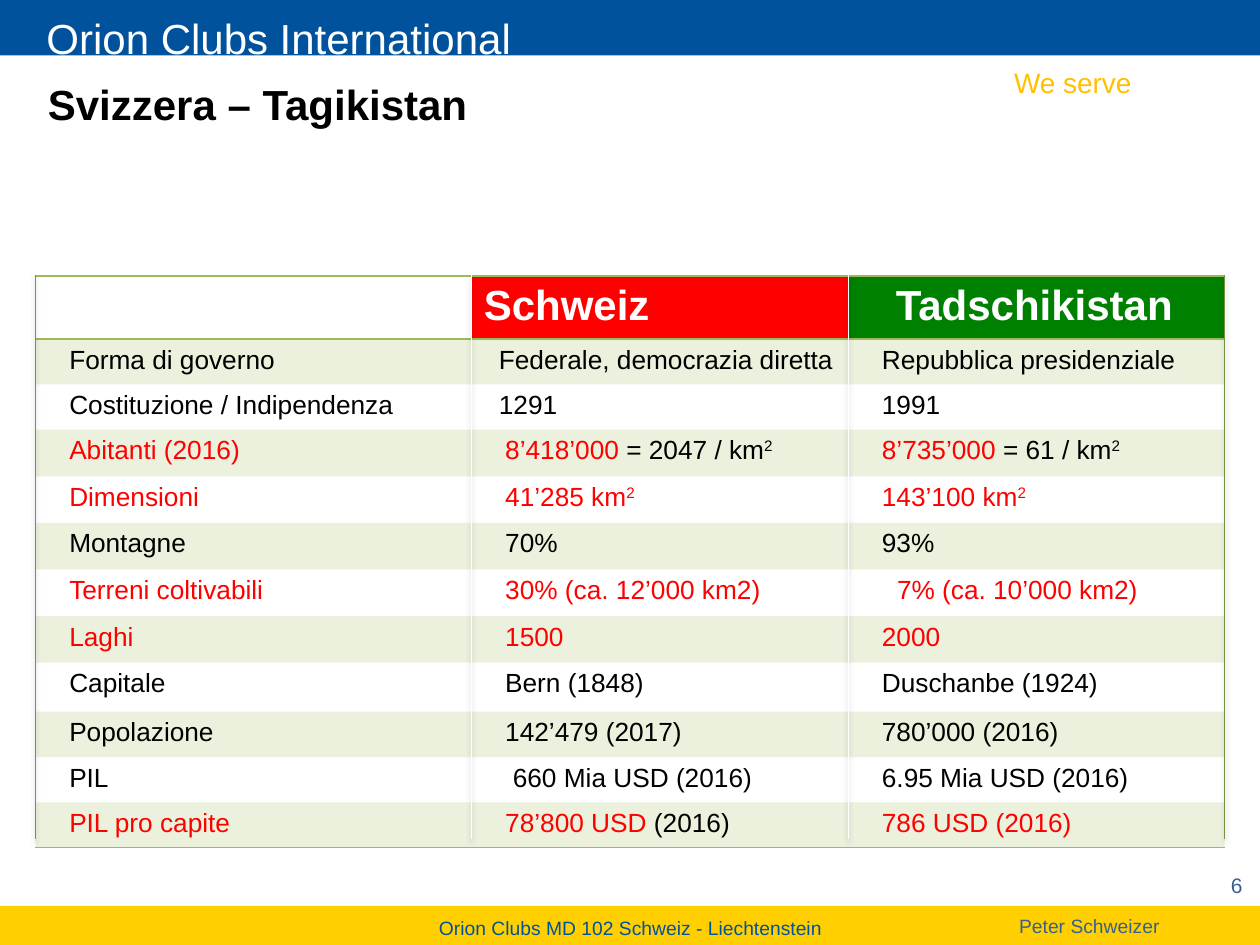
"""Build the Switzerland and Tajikistan comparison slide."""
from lxml import etree
from pptx import Presentation
from pptx.dml.color import RGBColor
from pptx.enum.shapes import MSO_CONNECTOR, MSO_SHAPE
from pptx.enum.text import MSO_ANCHOR, PP_ALIGN
from pptx.oxml import parse_xml
from pptx.oxml.ns import qn
from pptx.util import Inches, Pt

RECTANGLE = MSO_SHAPE.RECTANGLE
STRAIGHT = MSO_CONNECTOR.STRAIGHT
TOP, MIDDLE = MSO_ANCHOR.TOP, MSO_ANCHOR.MIDDLE
LEFT, CENTER, RIGHT = PP_ALIGN.LEFT, PP_ALIGN.CENTER, PP_ALIGN.RIGHT

WHITE = RGBColor(0xFF, 0xFF, 0xFF)
BLACK = RGBColor(0, 0, 0)
RED = RGBColor(0xFF, 0, 0)
GREEN = RGBColor(0, 0x80, 0)
BLUE = RGBColor(0, 0x52, 0x9C)
SLATE = RGBColor(0x37, 0x60, 0x92)
YELLOW = RGBColor(0xFF, 0xCF, 0)
AMBER = RGBColor(0xFF, 0xC0, 0)
OLIVE = RGBColor(0x9B, 0xBB, 0x59)
DARK_OLIVE = RGBColor(0x77, 0x93, 0x3C)

FONT = "Arial"
NAMESPACE = "http://schemas.openxmlformats.org/drawingml/2006/main"
PLAIN_STYLE = "{2D5ABB26-0587-4C30-8999-92F81FD0307C}"

TITLE = "Svizzera – Tagikistan"
BANDS = [(0, 0.44, BLUE), (7.19, 0.31, YELLOW)]
LABELS = [
    ("Orion Clubs International", (0.27, 0.05, 9.42, 0.5), 24, WHITE, LEFT, TOP),
    ("We serve", (7.95, 0.47, 1.15, 0.37), 16, AMBER, LEFT, TOP),
    ("Orion Clubs MD 102 Schweiz - Liechtenstein", (0.01, 7.22, 9.99, 0.29), 11, BLUE, CENTER, TOP),
    ("Peter Schweizer", (7.99, 7.21, 1.34, 0.29), 11, SLATE, LEFT, TOP),
    ("6", (8.86, 6.9, 1.1, 0.25), 12, SLATE, RIGHT, MIDDLE),
]

HEADERS = [("", None, 0.1), ("Schweiz", RED, 0.1), ("Tadschikistan", GREEN, 0.38)]
ROWS = [
    (0.36, "Forma di governo", "Federale, democrazia diretta", "Repubblica presidenziale"),
    (0.36, "Costituzione / Indipendenza", "1291", "1991"),
    (0.37, [("Abitanti (2016)", RED)],
     [("8’418’000", RED), (" = 2047 / km", BLACK), ("2", BLACK, True)],
     [("8’735’000 ", RED), ("= 61 / km", BLACK), ("2", BLACK, True)]),
    (0.37, [("Dimensioni", RED)],
     [("41’285 km", RED), ("2", RED, True)],
     [("143’100 km", RED), ("2", RED, True)]),
    (0.37, "Montagne", "70%", "93%"),
    (0.37, [("Terreni coltivabili", RED)],
     [("30% (ca. 12’000 km2)", RED)], [("7% (ca. 10’000 km2)", RED)]),
    (0.37, [("Laghi", RED)], [("1500", RED)], [("2000", RED)]),
    (0.39, "Capitale", "Bern (1848)", "Duschanbe (1924)"),
    (0.36, "Popolazione", "142’479 (2017)", "780’000 (2016)"),
    (0.36, "PIL", "660 Mia USD (2016)", "6.95 Mia USD (2016)"),
    (0.36, [("PIL pro capite", RED)],
     [("78’800 USD", RED), (" (2016)", BLACK)], [("786 USD (2016)", RED)]),
]
INDENT = 0.27
SPECIAL_INDENTS = {(1, 1): 0.22, (2, 1): 0.22, (10, 1): 0.33, (6, 2): 0.39}
TABLE_LEFT, TABLE_TOP, HEADER_HEIGHT = 0.28, 2.19, 0.47
COLUMN_WIDTHS = [3.46, 2.99, 2.99]
RULE_TOP, RULE_BOTTOM = 2.18, 6.66
RULES = [(0.28, DARK_OLIVE), (3.74, WHITE), (6.73, WHITE), (9.72, DARK_OLIVE)]


def add_span(para, text, size, color, bold=False, raised=False):
    span = para.add_run()
    span.text = text
    font = span.font
    font.name, font.size, font.bold = FONT, Pt(size), bold
    font.color.rgb = color
    if raised:
        span.font._element.set("baseline", "30000")


def add_band(slide, top, height, color):
    band = slide.shapes.add_shape(RECTANGLE, 0, Inches(top), Inches(10), Inches(height))
    band.shadow.inherit = False
    band.fill.solid()
    band.fill.fore_color.rgb = color
    band.line.fill.background()


def add_label(slide, text, place, size, color, align, anchor):
    box = slide.shapes.add_textbox(*map(Inches, place))
    box.text_frame.word_wrap = True
    box.text_frame.vertical_anchor = anchor
    para = box.text_frame.paragraphs[0]
    para.alignment = align
    add_span(para, text, size, color)


def tint_cell(cell):
    cell.fill.solid()
    cell.fill.fore_color.rgb = OLIVE
    color = cell._tc.tcPr.find(".//" + qn("a:srgbClr"))
    etree.SubElement(color, qn("a:alpha"), val="20000")


def add_borders(cell, sides):
    for position, side in enumerate(sides):
        border = parse_xml(
            f'<a:{side} xmlns:a="{NAMESPACE}" w="12700"><a:solidFill>'
            f'<a:srgbClr val="{OLIVE}"/></a:solidFill></a:{side}>')
        cell._tc.get_or_add_tcPr().insert(position, border)


def add_comparison(slide):
    heights = [HEADER_HEIGHT] + [row[0] for row in ROWS]
    frame = slide.shapes.add_table(
        len(heights), len(COLUMN_WIDTHS), Inches(TABLE_LEFT), Inches(TABLE_TOP),
        Inches(sum(COLUMN_WIDTHS)), Inches(sum(heights)))
    table = frame.table
    table.first_row = table.horz_banding = False
    table._tbl.tblPr.find(qn("a:tableStyleId")).text = PLAIN_STYLE
    for column, width in zip(table.columns, COLUMN_WIDTHS):
        column.width = Inches(width)
    for row, height in zip(table.rows, heights):
        row.height = Inches(height)
    for index, (text, color, margin) in enumerate(HEADERS):
        cell = table.cell(0, index)
        cell.margin_left = Inches(margin)
        if text:
            add_span(cell.text_frame.paragraphs[0], text, 24, WHITE, bold=True)
            cell.fill.solid()
            cell.fill.fore_color.rgb = color
        else:
            cell.fill.background()
        add_borders(cell, ["lnT", "lnB"])
    for number, (_, *contents) in enumerate(ROWS, 1):
        for index, content in enumerate(contents):
            cell = table.cell(number, index)
            cell.margin_left = Inches(SPECIAL_INDENTS.get((number, index), INDENT))
            spans = [(content, BLACK)] if isinstance(content, str) else content
            for text, color, *raised in spans:
                add_span(cell.text_frame.paragraphs[0], text, 15, color, raised=bool(raised))
            if number % 2:
                tint_cell(cell)
            else:
                cell.fill.background()
            if number == len(ROWS):
                add_borders(cell, ["lnB"])


def add_rule(slide, left, color):
    rule = slide.shapes.add_connector(
        STRAIGHT, Inches(left), Inches(RULE_TOP), Inches(left), Inches(RULE_BOTTOM))
    rule.line.color.rgb = color
    rule.line.width = Pt(0.25)
    rule._element.spPr.append(parse_xml(
        f'<a:effectLst xmlns:a="{NAMESPACE}"><a:outerShdw blurRad="{Pt(3.1)}" '
        f'dist="{Pt(1.6)}" dir="5400000" rotWithShape="0"><a:srgbClr val="000000">'
        '<a:alpha val="38000"/></a:srgbClr></a:outerShdw></a:effectLst>'))


def main():
    deck = Presentation()
    deck.slide_width, deck.slide_height = Inches(10), Inches(7.5)
    slide = deck.slides.add_slide(deck.slide_layouts[5])
    for band in BANDS:
        add_band(slide, *band)
    for label in LABELS:
        add_label(slide, *label)
    title = slide.shapes.title
    title.left, title.top, title.width, title.height = map(Inches, (0.28, 0.62, 7.52, 0.4))
    title.text_frame.vertical_anchor = MIDDLE
    para = title.text_frame.paragraphs[0]
    para.alignment = LEFT
    add_span(para, TITLE, 24, BLACK, bold=True)
    add_comparison(slide)
    for rule in RULES:
        add_rule(slide, *rule)
    deck.save("out.pptx")


if __name__ == "__main__":
    main()
